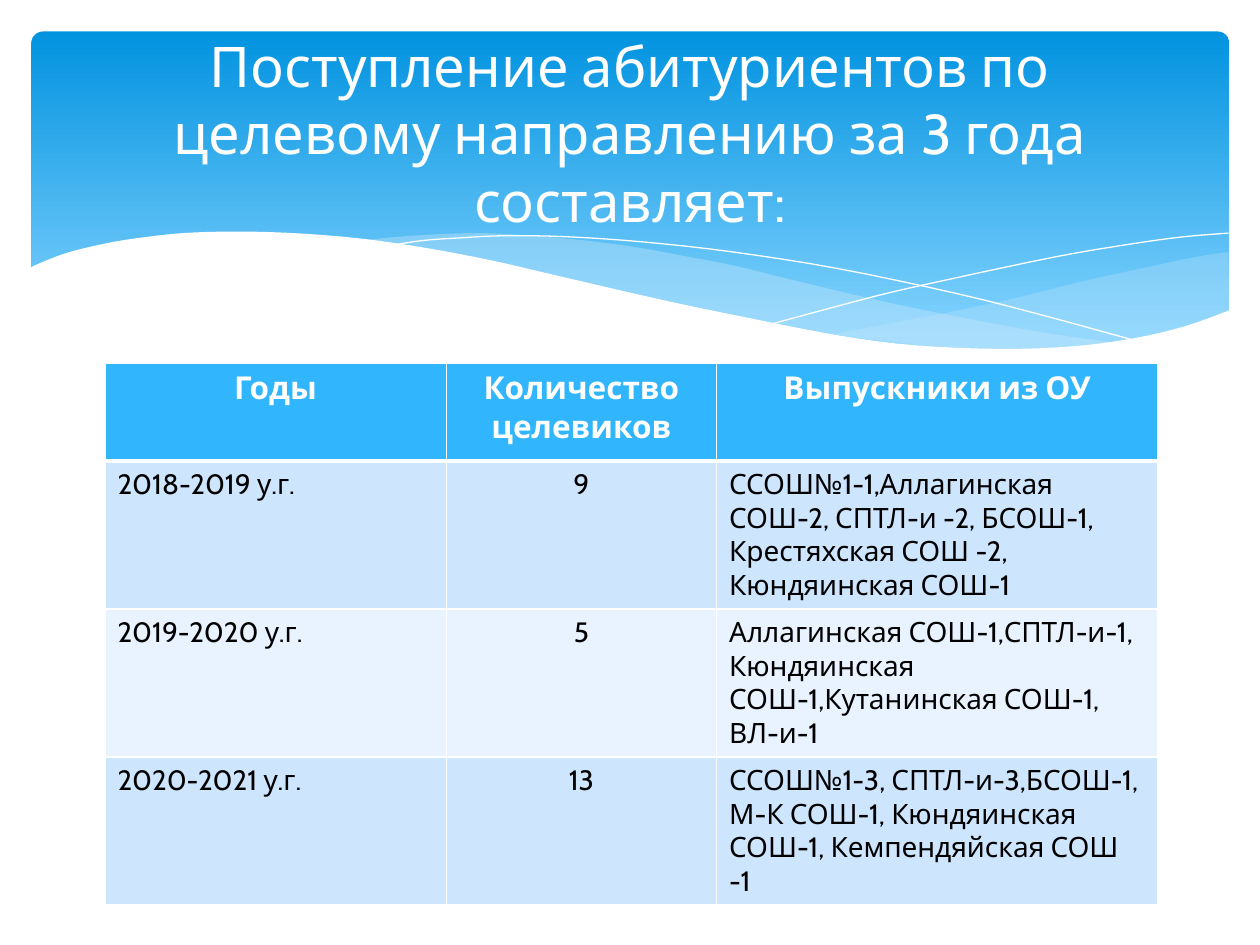
from dataclasses import dataclass
from typing import Optional

from lxml.etree import SubElement
from pptx import Presentation
from pptx.dml.color import RGBColor
from pptx.enum.shapes import MSO_SHAPE as Shape
from pptx.enum.text import MSO_ANCHOR as Anchor, PP_ALIGN as Align
from pptx.oxml.ns import qn
from pptx.util import Pt

FONT = "Cabin"
WHITE = RGBColor(0xFF, 0xFF, 0xFF)
BLACK = RGBColor(0x00, 0x00, 0x00)
SKY_TOP = RGBColor(0x02, 0x93, 0xE0)
SKY_BOTTOM = RGBColor(0x83, 0xD3, 0xFE)
WAVE_BLUE = RGBColor(0xC6, 0xE7, 0xFC)
HEADER_BLUE = RGBColor(0x31, 0xB6, 0xFD)
BAND_COLORS = (RGBColor(0xCE, 0xE5, 0xFE), RGBColor(0xE8, 0xF3, 0xFF))

Points = list[tuple[float, float]]


@dataclass
class Wave:
    """Smooth curves joined end to end; without a fill they are a thin line."""
    curves: list[Points]
    fill: Optional[RGBColor] = None
    opacity: int = 100


WAVES = [
    Wave([[(702, 144), (682.5, 147), (652, 153.5), (620, 160.5), (579.5, 170.5),
           (542, 178.5), (508, 185), (476, 191)],
          [(476, 191), (507.5, 195), (536.5, 198), (562, 199.5), (586, 200),
           (607.5, 199.5), (634, 197.5), (657.5, 193.5), (678, 188), (702.5, 178)]],
         WAVE_BLUE, 29),
    Wave([[(643, 196.5), (602.5, 191), (558, 183), (508, 173), (453, 160),
           (420.5, 152), (389.5, 146), (361.5, 141), (335, 137.5), (302.5, 134.5),
           (273.5, 133.2), (247.5, 134), (225.5, 135.5), (206, 137.5)],
          [(206, 137.5), (246, 143.5), (291, 152), (323.5, 160), (381.5, 173),
           (432.5, 183.5), (479, 191.5), (520, 197), (556.5, 199.5), (589, 200),
           (617, 199.5), (643, 196.5)]],
         WAVE_BLUE, 40),
    Wave([[(222.5, 140.4), (241, 137.5), (261.5, 136), (288.5, 134.7), (324, 135.3),
           (367, 138.2), (419, 144), (479, 153.5), (547, 167.8), (598, 180.7),
           (653, 195.8)]]),
    Wave([[(441.5, 185), (500.5, 169.2), (538.5, 160.5), (602, 147), (644.5, 139.7),
           (675.5, 135.4), (702, 133.2)]]),
    Wave([[(703.4, 177), (677, 186.5), (647, 193.5), (612, 198), (571, 199.4),
           (522.5, 197.3), (481, 192), (434, 183), (381, 172), (322, 158.4),
           (281.5, 149), (245, 142), (210, 136.8), (180, 134), (152, 132.6),
           (127.5, 132.4), (105, 133.2), (85.5, 135.2), (68.5, 137.6), (54.5, 140.4),
           (42.5, 143.3), (33, 146.3), (21, 151.2), (16.6, 153.4)],
          [(16.6, 237), (703.4, 237)]],
         WHITE),
]

TITLE = "Поступление абитуриентов по целевому направлению за 3 года составляет:"
ROWS = [
    ("Годы", "Количество целевиков", "Выпускники из ОУ"),
    ("2018-2019 у.г.", "9",
     "ССОШ№1-1,Аллагинская СОШ-2, СПТЛ-и -2, БСОШ-1, Крестяхская СОШ -2, "
     "Кюндяинская СОШ-1"),
    ("2019-2020 у.г.", "5",
     "Аллагинская СОШ-1,СПТЛ-и-1, Кюндяинская СОШ-1,Кутанинская СОШ-1, ВЛ-и-1"),
    ("2020-2021 у.г.", "13",
     "ССОШ№1-3, СПТЛ-и-3,БСОШ-1, М-К СОШ-1, Кюндяинская СОШ-1, "
     "Кемпендяйская СОШ -1"),
]
COLUMN_WIDTHS = (195, 154.5, 252)
ROW_HEIGHTS = (56, 72, 72, 72)


def smooth(keys: Points, steps: int = 4) -> Points:
    """Return points on a Catmull-Rom spline through the keys."""
    padded = [keys[0], *keys, keys[-1]]
    result = [keys[0]]
    for a, b, c, d in zip(padded, padded[1:], padded[2:], padded[3:]):
        for step in range(1, steps + 1):
            t = step / steps
            x, y = (
                q + t / 2 * (r - p + t * (2 * p - 5 * q + 4 * r - s
                                          + t * (3 * (q - r) + s - p)))
                for p, q, r, s in zip(a, b, c, d))
            result.append((x, y))
    return result


def draw_sky(slide) -> None:
    sky = slide.shapes.add_shape(
        Shape.ROUNDED_RECTANGLE, Pt(18), Pt(18), Pt(684.5), Pt(194.5))
    sky.adjustments[0] = 0.034
    sky.shadow.inherit = False
    sky.line.fill.background()
    sky.fill.gradient()
    sky.fill.gradient_angle = 270
    for stop, color, position in zip(
            sky.fill.gradient_stops, (SKY_TOP, SKY_BOTTOM), (0, 0.9)):
        stop.color.rgb = color
        stop.position = position


def draw_wave(slide, wave: Wave) -> None:
    points = [(Pt(x), Pt(y)) for curve in wave.curves for x, y in smooth(curve)]
    builder = slide.shapes.build_freeform(*points[0])
    builder.add_line_segments(points[1:], close=wave.fill is not None)
    shape = builder.convert_to_shape()
    shape.shadow.inherit = False
    if wave.fill is None:
        shape.fill.background()
        shape.line.color.rgb = WHITE
        shape.line.width = Pt(0)
        return
    shape.line.fill.background()
    shape.fill.solid()
    shape.fill.fore_color.rgb = wave.fill
    if wave.opacity < 100:
        color = shape.fill._xPr.find(qn("a:solidFill"))[0]
        SubElement(color, qn("a:alpha"), val=str(wave.opacity * 1000))


def write(frame, text: str, size: float, color: RGBColor, align: Align,
          bold: bool = False) -> None:
    frame.word_wrap = True
    paragraph = frame.paragraphs[0]
    paragraph.text = text
    paragraph.alignment = align
    font = paragraph.font
    font.name, font.size, font.bold = FONT, Pt(size), bold
    font.color.rgb = color


def set_borders(cell, bottom_width: float) -> None:
    properties = cell._tc.get_or_add_tcPr()
    widths = {"a:lnL": 1, "a:lnR": 1, "a:lnT": 1, "a:lnB": bottom_width}
    for index, (tag, width) in enumerate(widths.items()):
        line = SubElement(properties, qn(tag), w=str(Pt(width)))
        fill = SubElement(line, qn("a:solidFill"))
        SubElement(fill, qn("a:srgbClr"), val=str(WHITE))
        properties.insert(index, line)


def draw_table(slide) -> None:
    table = slide.shapes.add_table(
        len(ROWS), len(COLUMN_WIDTHS), Pt(60), Pt(207.5),
        Pt(sum(COLUMN_WIDTHS)), Pt(sum(ROW_HEIGHTS))).table
    for column, width in zip(table.columns, COLUMN_WIDTHS):
        column.width = Pt(width)
    for row_index, (row, height, texts) in enumerate(
            zip(table.rows, ROW_HEIGHTS, ROWS)):
        row.height = Pt(height)
        header = row_index == 0
        for column_index, (cell, text) in enumerate(zip(row.cells, texts)):
            cell.fill.solid()
            cell.fill.fore_color.rgb = (
                HEADER_BLUE if header else BAND_COLORS[(row_index - 1) % 2])
            set_borders(cell, 3 if header else 1)
            centred = header or column_index == 1
            write(cell.text_frame, text, 18 if header else 16,
                  WHITE if header else BLACK,
                  Align.CENTER if centred else Align.LEFT, header)


def draw_title(slide) -> None:
    frame = slide.shapes.add_textbox(Pt(36), Pt(26.5), Pt(648), Pt(98.5)).text_frame
    frame.vertical_anchor = Anchor.MIDDLE
    write(frame, TITLE, 32, WHITE, Align.CENTER)


def main() -> None:
    presentation = Presentation()
    presentation.slide_width, presentation.slide_height = Pt(720), Pt(540)
    slide = presentation.slides.add_slide(presentation.slide_layouts[6])
    draw_sky(slide)
    for wave in WAVES:
        draw_wave(slide, wave)
    draw_table(slide)
    draw_title(slide)
    presentation.save("out.pptx")


if __name__ == "__main__":
    main()
